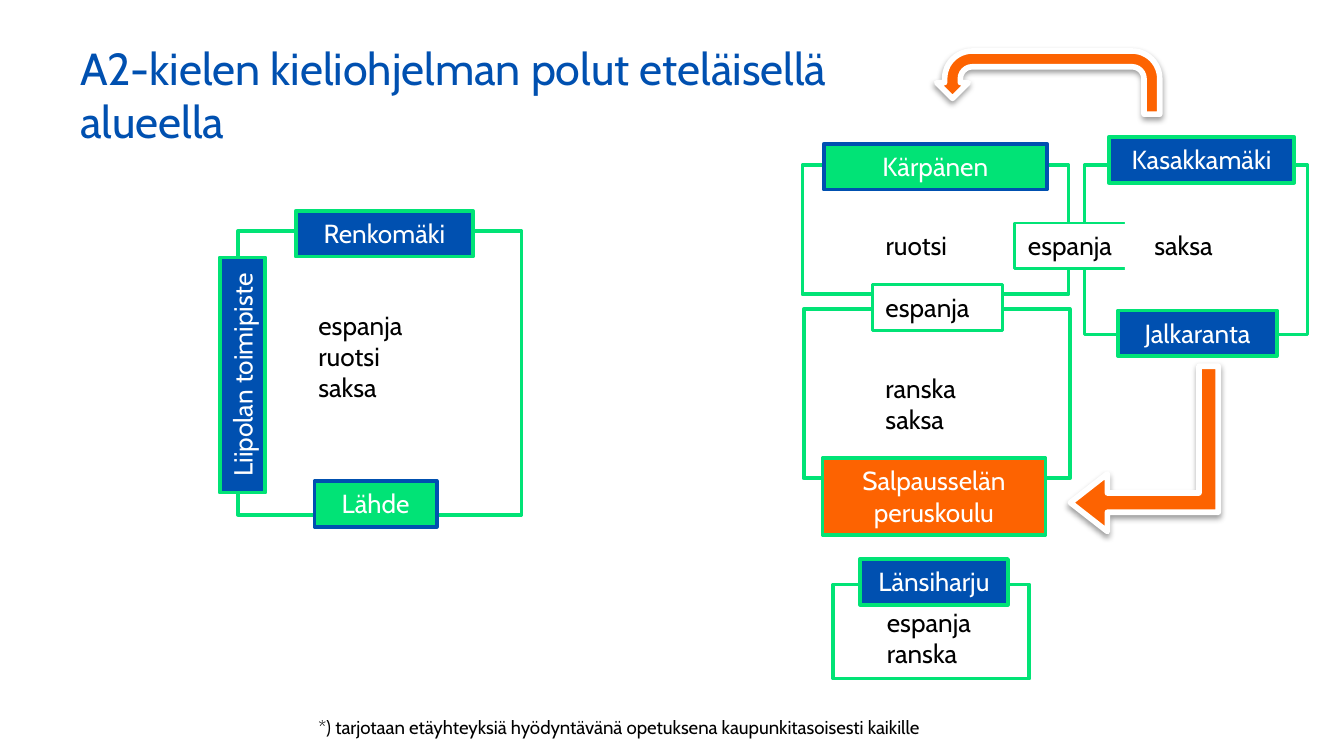
import pptx
import pptx.dml.color
import pptx.enum.shapes
import pptx.enum.text
import pptx.oxml
import pptx.oxml.ns
import pptx.util

SHAPES = pptx.enum.shapes.MSO_SHAPE
ALIGN = pptx.enum.text.PP_ALIGN
ANCHOR = pptx.enum.text.MSO_ANCHOR
GREEN, BLUE, ORANGE, WHITE, BLACK = "01E376", "0050B0", "FD6301", "FFFFFF", "000000"

presentation = pptx.Presentation()
presentation.slide_width = pptx.util.Inches(10)
presentation.slide_height = presentation.slide_width * 9 // 16
slide = presentation.slides.add_slide(presentation.slide_layouts[6])
column = presentation.slide_width / 100
row = presentation.slide_height / 56.25


def color(code):
    return pptx.dml.color.RGBColor.from_string(code)


def add_item(place, kind=SHAPES.RECTANGLE, fill=None, line=None, weight=2, lines=(),
             size=14, ink=BLACK, align=ALIGN.LEFT, anchor=ANCHOR.TOP):
    left, top, width, height = place
    frame = [round(left * column), round(top * row), round(width * column), round(height * row)]
    if fill:
        shape = slide.shapes.add_shape(kind, *frame)
        shape.shadow.inherit = False
        shape.fill.solid()
        shape.fill.fore_color.rgb = color(fill)
        if line:
            shape.line.color.rgb = color(line)
            shape.line.width = pptx.util.Pt(weight)
        else:
            shape.line.fill.background()
    else:
        shape = slide.shapes.add_textbox(*frame)
    if lines:
        body = {"word_wrap": True, "vertical_anchor": anchor}
        for name, value in body.items():
            setattr(shape.text_frame, name, value)
        shape.text_frame.text = "\n".join(lines)
        for paragraph in shape.text_frame.paragraphs:
            paragraph.alignment = align
            font_format = {"name": "Cabin", "size": pptx.util.Pt(size)}
            for name, value in font_format.items():
                setattr(paragraph.font, name, value)
            paragraph.font.color.rgb = color(ink)
    return shape


add_item((5, 2.3, 67.1, 9.4), lines=["A2-kielen kieliohjelman polut eteläisellä alueella"],
         size=24, ink=BLUE, anchor=ANCHOR.MIDDLE)

path_frames = [
    (17.7, 17.2, 21.1, 21.1),
    (62, 43.5, 14.6, 7),
    (59.8, 23, 19.8, 12.6),
    (59.7, 12.3, 19.8, 9.6),
    (80.7, 12.3, 16.6, 12.6),
]
for place in path_frames:
    add_item(place, fill=WHITE, line=GREEN)

schools = [
    ("Lähde", (23.4, 35.8, 9.1, 3.4), GREEN, BLUE, 0),
    ("Renkomäki", (22, 15.7, 13.2, 3.4), BLUE, GREEN, 0),
    ("Liipolan toimipiste", (9.3, 26.2, 17.5, 3.4), BLUE, GREEN, 270),
    ("Länsiharju", (64, 41.6, 11, 3.4), BLUE, GREEN, 0),
    ("Kärpänen", (61.3, 10.7, 16.6, 3.4), GREEN, BLUE, 0),
    ("Jalkaranta", (83.2, 23.1, 11.8, 3.4), BLUE, GREEN, 0),
    ("Kasakkamäki", (82.5, 10.2, 13.8, 3.4), BLUE, GREEN, 0),
    ("Salpausselän peruskoulu", (61.2, 34.1, 16.6, 5.7), ORANGE, GREEN, 0),
]
for school, place, fill, line, rotation in schools:
    label = add_item(place, fill=fill, line=line, lines=[school], ink=WHITE, align=ALIGN.CENTER)
    label.rotation = rotation

for left, top in [(75.5, 16.6), (64.9, 21.2)]:
    add_item((left, top, 9.7, 3.4), fill=WHITE, line=GREEN, weight=1.5, lines=["espanja"])
add_item((83.7, 15.6, 6, 5.5), fill=WHITE)

languages = [
    ((22.7, 22.5, 10.5, 8.1), ["espanja", "ruotsi", "saksa"]),
    ((65, 44.6, 10.5, 5.7), ["espanja", "ranska"]),
    ((64.9, 16.6, 8.9, 3.4), ["ruotsi"]),
    ((64.9, 27.2, 9.4, 5.7), ["ranska", "saksa"]),
    ((84.9, 16.6, 8.6, 3.4), ["saksa"]),
]
for place, lines in languages:
    add_item(place, lines=lines)

arrows = [
    (SHAPES.U_TURN_ARROW, (69.7, 3.8, 16.6, 4.7), 0, []),
    (SHAPES.BENT_UP_ARROW, (79, 27.9, 12.3, 11), 270, [0.13, 0.195, 0.25]),
]
for kind, place, rotation, adjustments in arrows:
    arrow = add_item(place, kind, fill=ORANGE, line=WHITE, weight=3)
    arrow.rotation = rotation
    for index, value in enumerate(adjustments):
        arrow.adjustments[index] = value
    properties = arrow.element.spPr
    properties.find(pptx.oxml.ns.qn("a:xfrm")).set("flipH", "1")
    effects = properties.find(pptx.oxml.ns.qn("a:effectLst"))
    effects.append(pptx.oxml.parse_xml(
        f'<a:outerShdw {pptx.oxml.ns.nsdecls("a")} blurRad="40000" dist="20000" '
        'dir="5400000" rotWithShape="0"><a:srgbClr val="000000">'
        '<a:alpha val="38000"/></a:srgbClr></a:outerShdw>'))

add_item((22.7, 52.8, 48.8, 2.7), size=10, lines=[
    "*) tarjotaan etäyhteyksiä hyödyntävänä opetuksena kaupunkitasoisesti kaikille"])

presentation.save("out.pptx")
